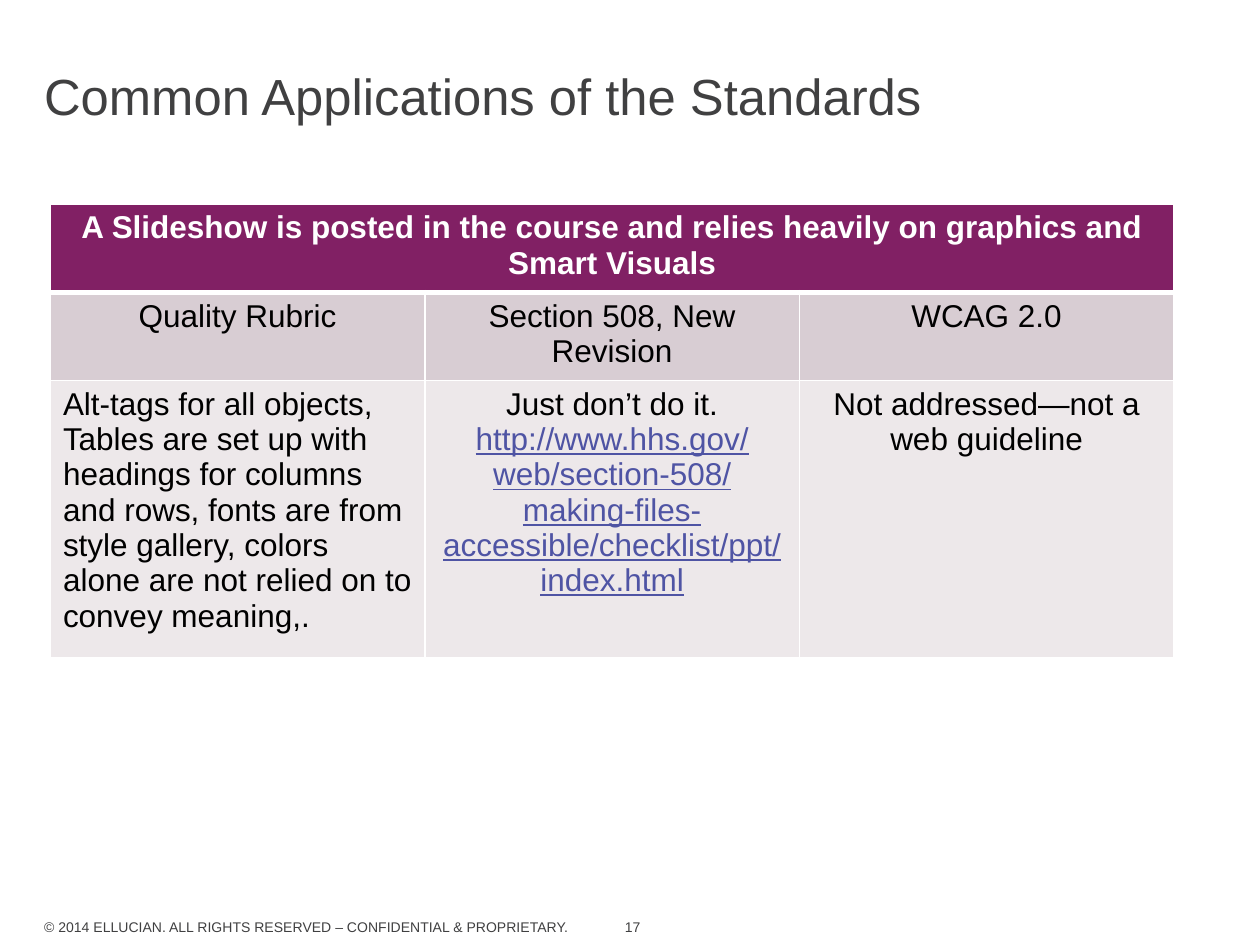
from lxml import etree
from pptx import Presentation
from pptx.dml.color import RGBColor
from pptx.enum.text import MSO_ANCHOR, PP_ALIGN
from pptx.oxml.ns import qn
from pptx.util import Pt

LEFT, CENTER = PP_ALIGN.LEFT, PP_ALIGN.CENTER
BOTTOM = MSO_ANCHOR.BOTTOM

FONT = "Arial"
GRAY = RGBColor(0x40, 0x40, 0x41)
WHITE = RGBColor(0xFF, 0xFF, 0xFF)
BLACK = RGBColor(0x00, 0x00, 0x00)
PLUM = RGBColor(0x81, 0x20, 0x64)
MAUVE = RGBColor(0xD8, 0xCD, 0xD3)
PALE = RGBColor(0xED, 0xE8, 0xEA)
LINK = RGBColor(0x4F, 0x54, 0xA4)

HEADING = "A Slideshow is posted in the course and relies heavily on graphics and Smart Visuals"
STANDARDS = ["Quality Rubric", "Section 508, New Revision", "WCAG 2.0"]
GUIDANCE = [
    ["Alt-tags for all objects,",
     "Tables are set up with headings for columns and rows, fonts are from style "
     "gallery, colors alone are not relied on to convey meaning,."],
    ["Just don’t do it.",
     "http://www.hhs.gov/web/section-508/making-files-accessible/checklist/ppt/index.html"],
    ["Not addressed—not a web guideline"],
]
ROW_HEIGHTS = [27, 27, 126]
COLUMN_WIDTH = 214


def add_span(para, text, size, color, bold=False, underline=False):
    """Add one formatted run to a paragraph."""
    span = para.add_run()
    span.text = text
    font = span.font
    font.name, font.size, font.bold, font.underline = FONT, Pt(size), bold, underline
    font.color.rgb = color


def set_frame(frame, wrap):
    """Anchor a text frame at the bottom and remove its margins."""
    frame.margin_left = frame.margin_top = frame.margin_right = frame.margin_bottom = 0
    frame.vertical_anchor = BOTTOM
    frame.word_wrap = wrap


def add_title(page, text):
    """Place and fill the title placeholder."""
    title = page.shapes.title
    title.left, title.top, title.width, title.height = Pt(25.2), Pt(7.2), Pt(669.6), Pt(64.8)
    set_frame(title.text_frame, True)
    para = title.text_frame.paragraphs[0]
    para.alignment = LEFT
    para.line_spacing = 0.85
    add_span(para, text, 29, GRAY)


def add_footer(page, text, left, width, wrap):
    """Add a small text box on the footer line."""
    box = page.shapes.add_textbox(Pt(left), Pt(524.9), Pt(width), Pt(9.4))
    set_frame(box.text_frame, wrap)
    add_span(box.text_frame.paragraphs[0], text, 8, GRAY)


def add_border(cell, side, width):
    """Draw a white border on one side of a cell."""
    line = etree.SubElement(cell._tc.get_or_add_tcPr(), qn(f"a:ln{side}"), w=str(Pt(width)))
    fill = etree.SubElement(line, qn("a:solidFill"))
    etree.SubElement(fill, qn("a:srgbClr"), val=str(WHITE))


def fill_cell(cell, texts, color, alignment=CENTER, bold=False):
    """Write the paragraphs of a cell, underlining web addresses."""
    frame = cell.text_frame
    for index, text in enumerate(texts):
        para = frame.add_paragraph() if index else frame.paragraphs[0]
        para.alignment = alignment
        is_link = text.startswith("http")
        add_span(para, text, 18, LINK if is_link else color, bold, is_link)


def add_standards_table(page):
    """Build the table that compares the three standards."""
    count = len(STANDARDS)
    holder = page.shapes.add_table(len(ROW_HEIGHTS), count, Pt(28.8), Pt(116.6),
                                   Pt(COLUMN_WIDTH * count), Pt(259.2))
    table = holder.table
    for column in table.columns:
        column.width = Pt(COLUMN_WIDTH)
    for index, (height, color) in enumerate(zip(ROW_HEIGHTS, (PLUM, MAUVE, PALE))):
        table.rows[index].height = Pt(height)
        for cell in table.rows[index].cells:
            for side in "LRTB":
                heavy = (index, side) in ((0, "B"), (1, "T"))
                add_border(cell, side, 3 if heavy else 1)
            cell.fill.solid()
            cell.fill.fore_color.rgb = color
    holder.height = Pt(259.2)
    table.cell(0, 0).merge(table.cell(0, count - 1))
    fill_cell(table.cell(0, 0), [HEADING], WHITE, bold=True)
    for index, (standard, guidance) in enumerate(zip(STANDARDS, GUIDANCE)):
        fill_cell(table.cell(1, index), [standard], BLACK)
        fill_cell(table.cell(2, index), guidance, BLACK, CENTER if index else LEFT)


def main():
    """Build and save the deck."""
    deck = Presentation()
    deck.slide_width, deck.slide_height = Pt(720), Pt(540)
    page = deck.slides.add_slide(deck.slide_layouts[5])
    add_footer(page, "17", 357.1, 10.1, False)
    add_footer(page, "© 2014 ELLUCIAN. ALL RIGHTS RESERVED – CONFIDENTIAL & PROPRIETARY.",
               25.2, 350.6, True)
    add_title(page, "Common Applications of the Standards")
    add_standards_table(page)
    deck.save("out.pptx")


if __name__ == "__main__":
    main()
